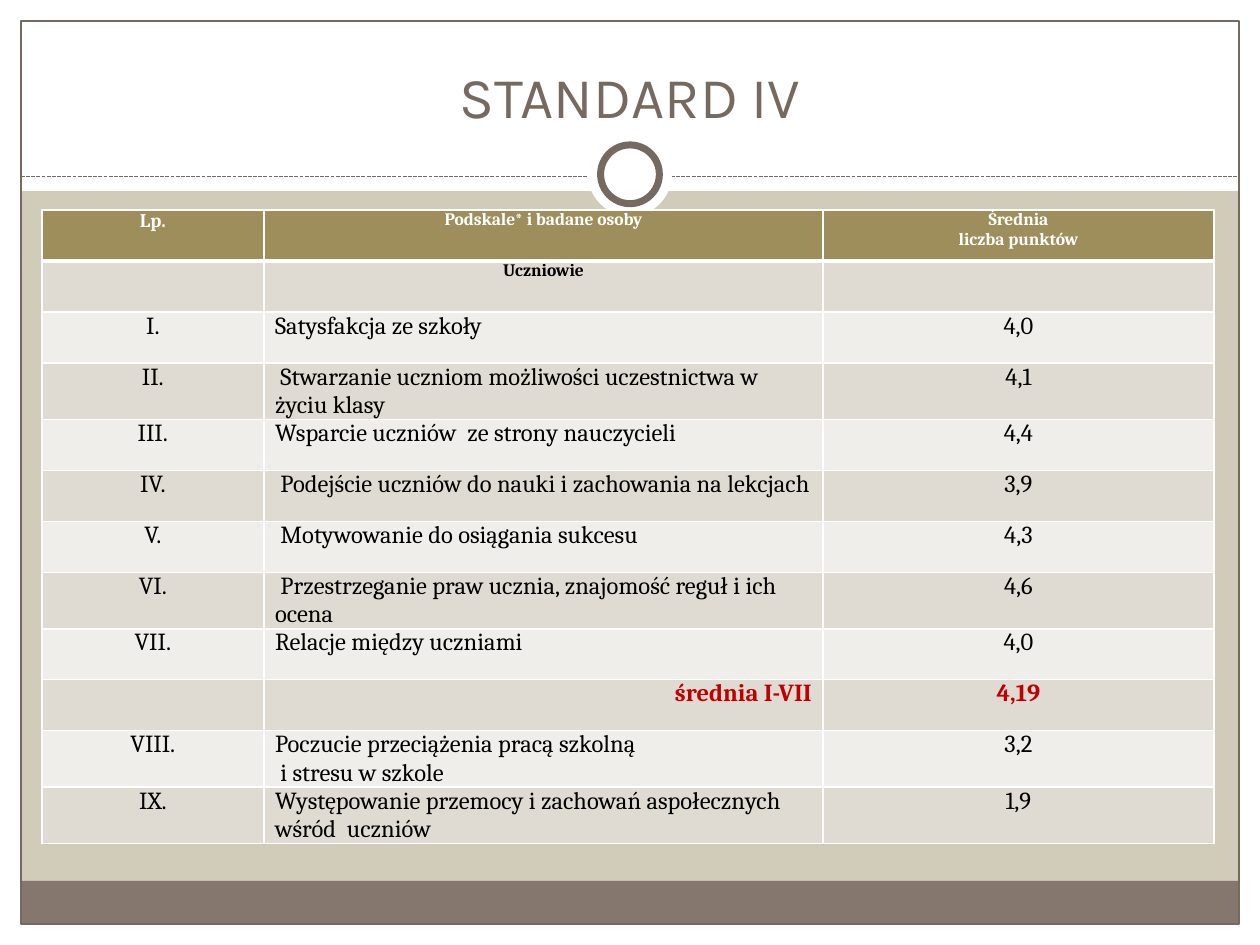
from dataclasses import dataclass
from typing import Optional

from lxml import etree
from pptx import Presentation
from pptx.dml.color import RGBColor
from pptx.enum.dml import MSO_LINE
from pptx.enum.shapes import MSO_CONNECTOR, MSO_SHAPE
from pptx.enum.text import MSO_ANCHOR, MSO_AUTO_SIZE, PP_ALIGN
from pptx.oxml.ns import qn
from pptx.util import Inches, Pt

RECT, OVAL = MSO_SHAPE.RECTANGLE, MSO_SHAPE.OVAL
LEFT, CENTER, RIGHT = PP_ALIGN.LEFT, PP_ALIGN.CENTER, PP_ALIGN.RIGHT

# Grid of 60 columns and 45 rows
WIDTH, HEIGHT, COLS, ROWS = 10, 7.5, 60, 45
COLORS = {
    "background": "D0CCB9", "white": "FFFFFF", "footer": "85776D",
    "frame": "756960", "header": "9E8E5C", "dark": "DFDBD2",
    "light": "F0EEEA", "text": "000000", "accent": "C00000",
}


@dataclass
class Panel:
    x: float
    y: float
    w: float
    h: float
    kind: int = RECT
    fill: Optional[str] = "white"
    line_pt: float = 0


@dataclass
class Row:
    number: str
    label: str
    score: str
    align: int = LEFT
    size: int = 14
    bold: bool = False
    color: str = "text"
    number_size: int = 14


PANELS = [
    Panel(0, 44, 60, 1),
    Panel(0, 0, 60, 9.1),
    Panel(0, 0, 1, 45),
    Panel(59, 0, 1, 45),
    Panel(1, 41.95, 58, 2.05, fill="footer"),
    Panel(1, 1, 58, 43, fill=None, line_pt=0.75),
]
CIRCLES = [
    Panel(28, 6.3, 4, 4, OVAL),
    Panel(28.6, 6.9, 2.8, 2.8, OVAL, line_pt=4),
]

COLUMN_WIDTHS = [10.56, 26.64, 18.6]
ROW_HEIGHT = 2.43
TABLE_ROWS = [
    Row("Lp.", "Podskale* i badane osoby", "Średnia\nliczba punktów",
        CENTER, 10, True, "white", 11),
    Row("", "Uczniowie", "", CENTER, 10, True),
    Row("I.", "Satysfakcja ze szkoły", "4,0"),
    Row("II.", " Stwarzanie uczniom możliwości uczestnictwa w życiu klasy", "4,1"),
    Row("III.", "Wsparcie uczniów  ze strony nauczycieli", "4,4"),
    Row("IV.", " Podejście uczniów do nauki i zachowania na lekcjach", "3,9"),
    Row("V.", " Motywowanie do osiągania sukcesu", "4,3"),
    Row("VI.", " Przestrzeganie praw ucznia, znajomość reguł i ich ocena", "4,6"),
    Row("VII.", "Relacje między uczniami", "4,0"),
    Row("", "średnia I-VII", "4,19", RIGHT, bold=True, color="accent"),
    Row("VIII.", "Poczucie przeciążenia pracą szkolną\v i stresu w szkole", "3,2"),
    Row("IX.", "Występowanie przemocy i zachowań aspołecznych wśród  uczniów", "1,9"),
]


def gx(cols: float) -> int:
    return Inches(WIDTH * cols / COLS)


def gy(rows: float) -> int:
    return Inches(HEIGHT * rows / ROWS)


def rgb(name: str) -> RGBColor:
    return RGBColor.from_string(COLORS[name])


def write(tf, text: str, *, size: float, font: str = "Cambria", color: str = "text",
          bold: bool = False, align: int = LEFT) -> None:
    """Split paragraphs at newlines and break lines at vertical tabs."""
    tf.text = text
    for p in tf.paragraphs:
        p.alignment = align
        for r in p.runs:
            r.font.name, r.font.size, r.font.bold = font, Pt(size), bold
            r.font.color.rgb = rgb(color)


def draw_panel(slide, panel: Panel) -> None:
    sp = slide.shapes.add_shape(panel.kind, gx(panel.x), gy(panel.y),
                                gx(panel.w), gy(panel.h))
    sp.shadow.inherit = False
    if panel.fill:
        sp.fill.solid()
        sp.fill.fore_color.rgb = rgb(panel.fill)
    else:
        sp.fill.background()
    if panel.line_pt:
        sp.line.color.rgb = rgb("frame")
        sp.line.width = Pt(panel.line_pt)
    else:
        sp.line.fill.background()


def draw_divider(slide, y: float) -> None:
    line = slide.shapes.add_connector(MSO_CONNECTOR.STRAIGHT, gx(1), gy(y), gx(59), gy(y))
    line.line.color.rgb = rgb("frame")
    line.line.width = Pt(0.75)
    line.line.dash_style = MSO_LINE.SQUARE_DOT
    etree.SubElement(line._element.spPr, qn("a:effectLst"))


def set_borders(cell, top: float, bottom: float) -> None:
    tc_pr = cell._tc.get_or_add_tcPr()
    for side, width in {"L": 1, "R": 1, "T": top, "B": bottom}.items():
        ln = etree.SubElement(tc_pr, qn(f"a:ln{side}"), w=str(Pt(width)))
        fill = etree.SubElement(ln, qn("a:solidFill"))
        etree.SubElement(fill, qn("a:srgbClr"), val=COLORS["white"])


def draw_table(slide, x: float, y: float) -> None:
    count = len(TABLE_ROWS)
    table = slide.shapes.add_table(count, len(COLUMN_WIDTHS), gx(x), gy(y),
                                   gx(sum(COLUMN_WIDTHS)), gy(ROW_HEIGHT * count)).table
    for column, width in zip(table.columns, COLUMN_WIDTHS):
        column.width = gx(width)
    for i, row in enumerate(TABLE_ROWS):
        table.rows[i].height = gy(ROW_HEIGHT)
        fill = "header" if i == 0 else ("dark" if i % 2 else "light")
        contents = [(row.number, CENTER, row.number_size),
                    (row.label, row.align, row.size),
                    (row.score, CENTER, row.size)]
        for j, (text, align, size) in enumerate(contents):
            cell = table.cell(i, j)
            cell.margin_left = cell.margin_right = Inches(0.09)
            cell.margin_top = cell.margin_bottom = 0
            set_borders(cell, top=3 if i == 1 else 1, bottom=3 if i == 0 else 1)
            cell.fill.solid()
            cell.fill.fore_color.rgb = rgb(fill)
            write(cell.text_frame, text, size=size, color=row.color,
                  bold=row.bold, align=align)


def draw_title(slide, text: str) -> None:
    title = slide.shapes.title
    title.left, title.top, title.width, title.height = gx(2), gy(1.5), gx(56), gy(5)
    tf = title.text_frame
    tf.word_wrap, tf.auto_size = True, MSO_AUTO_SIZE.NONE
    tf.vertical_anchor = MSO_ANCHOR.BOTTOM
    write(tf, text, size=33, font="Karla", color="frame", align=CENTER)
    # Bring the title in front of the white band
    slide.shapes._spTree.append(title._element)


def main() -> None:
    prs = Presentation()
    prs.slide_width, prs.slide_height = Inches(WIDTH), Inches(HEIGHT)
    slide = prs.slides.add_slide(prs.slide_layouts[5])
    slide.background.fill.solid()
    slide.background.fill.fore_color.rgb = rgb("background")

    # Frame and decoration
    for panel in PANELS:
        draw_panel(slide, panel)
    draw_divider(slide, 8.4)
    for circle in CIRCLES:
        draw_panel(slide, circle)

    # Content
    draw_title(slide, "STANDARD IV")
    draw_table(slide, 2, 10)
    prs.save("out.pptx")


if __name__ == "__main__":
    main()
